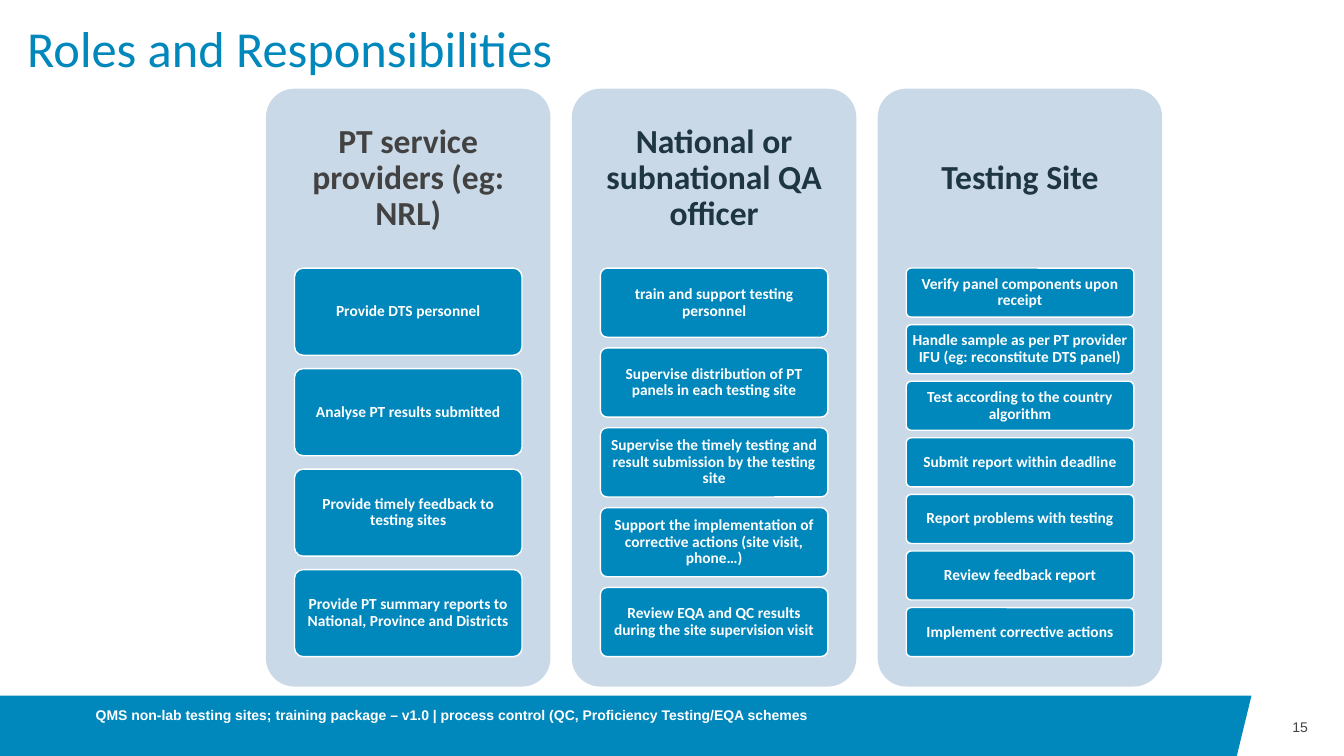
from pptx import Presentation
from pptx.dml.color import RGBColor
from pptx.enum.shapes import MSO_SHAPE as Shape
from pptx.enum.text import MSO_ANCHOR as Anchor, MSO_AUTO_SIZE as AutoSize, PP_ALIGN as Align
from pptx.util import Pt

TITLE = "Roles and Responsibilities"
FOOTER = ("QMS non-lab testing sites; training package – v1.0 | "
          "process control (QC, Proficiency Testing/EQA schemes")
PAGE = "15"
ROLES = [
    ("PT service providers (eg: NRL)", "grey", [
        "Provide DTS personnel",
        "Analyse PT results submitted",
        "Provide timely feedback to testing sites",
        "Provide PT summary reports to National, Province and Districts",
    ]),
    ("National or subnational QA officer", "navy", [
        "train and support testing personnel",
        "Supervise distribution of PT panels in each testing site",
        "Supervise the timely testing and result submission by the testing site",
        "Support the implementation of corrective actions (site visit, phone…)",
        "Review EQA and QC results during the site supervision visit",
    ]),
    ("Testing Site", "navy", [
        "Verify panel components upon receipt",
        "Handle sample as per PT provider IFU (eg: reconstitute DTS panel)",
        "Test according to the country algorithm",
        "Submit report within deadline",
        "Report problems with testing",
        "Review feedback report",
        "Implement corrective actions",
    ]),
]
COLORS = {"blue": "0087BC", "pale": "CAD9E7", "grey": "424242",
          "navy": "1D3641", "white": "FFFFFF"}

PANEL_LEFT, PANEL_TOP, PANEL_W, PANEL_H = 190, 63.4, 203.2, 427
PANEL_PITCH = 218.5
HEADER_H = PANEL_H * 0.3
STACK_H = PANEL_H * 0.65
CARD_INSET = PANEL_W * 0.1
CARD_W = PANEL_W * 0.8
GAP_RATIO = 2 / 13
BAND_TOP, BAND_BOTTOM = 496.8, 542


def rgb(name):
    return RGBColor.from_string(COLORS[name])


def write(sp, text, size, color, font="Calibri", bold=False, align=Align.LEFT,
          anchor=Anchor.MIDDLE, inset=(0, 0), spacing=None):
    tf = sp.text_frame
    tf.word_wrap = True
    tf.auto_size = AutoSize.NONE
    tf.vertical_anchor = anchor
    tf.margin_left = tf.margin_right = Pt(inset[0])
    tf.margin_top = tf.margin_bottom = Pt(inset[1])
    p = tf.paragraphs[0]
    p.alignment = align
    p.line_spacing = spacing
    r = p.add_run()
    r.text = text
    r.font.name, r.font.size, r.font.bold = font, Pt(size), bold
    r.font.color.rgb = rgb(color)


def paint(sp, fill, line=None):
    sp.shadow.inherit = False
    sp.fill.solid()
    sp.fill.fore_color.rgb = rgb(fill)
    if line:
        sp.line.color.rgb = rgb(line)
        sp.line.width = Pt(1)
    else:
        sp.line.fill.background()


def add_rounded(s, box, fill, line=None):
    sp = s.shapes.add_shape(Shape.ROUNDED_RECTANGLE, *map(Pt, box))
    sp.adjustments[0] = 0.1
    paint(sp, fill, line)
    return sp


def add_label(s, box, text, size, color, **style):
    write(s.shapes.add_textbox(*map(Pt, box)), text, size, color, **style)


def add_role(s, left, heading, color, duties):
    add_rounded(s, (left, PANEL_TOP, PANEL_W, PANEL_H), "pale")
    add_label(s, (left, PANEL_TOP, PANEL_W, HEADER_H), heading, 24, color,
              bold=True, align=Align.CENTER, inset=(7.2, 7.2), spacing=0.9)
    n = len(duties)
    card_h = STACK_H / (n + GAP_RATIO * (n - 1))
    for i, duty in enumerate(duties):
        top = PANEL_TOP + HEADER_H + i * card_h * (1 + GAP_RATIO)
        card = add_rounded(s, (left + CARD_INSET, top, CARD_W, card_h), "blue", "white")
        write(card, duty, 11, "white", bold=True, align=Align.CENTER,
              inset=(2.1, 1.6), spacing=0.9)


def main():
    prs = Presentation()
    prs.slide_width, prs.slide_height = Pt(960), Pt(540)
    s = prs.slides.add_slide(prs.slide_layouts[5])

    fb = s.shapes.build_freeform(Pt(0), Pt(BAND_TOP))
    fb.add_line_segments([(Pt(894), Pt(BAND_TOP)), (Pt(883), Pt(BAND_BOTTOM)),
                          (Pt(0), Pt(BAND_BOTTOM))], close=True)
    paint(fb.convert_to_shape(), "blue")

    title = s.shapes.title
    title.left, title.top, title.width, title.height = map(Pt, (19.4, 16.6, 828, 39.6))
    write(title, TITLE, 36, "blue", anchor=Anchor.BOTTOM, spacing=0.9)

    add_label(s, (894, BAND_TOP, 40.3, 45.4), PAGE, 10, "grey",
              font="Arial", align=Align.RIGHT)
    add_label(s, (68.4, BAND_TOP, 576, 27.6), FOOTER, 10, "white",
              font="Arial", bold=True)

    for i, role in enumerate(ROLES):
        add_role(s, PANEL_LEFT + i * PANEL_PITCH, *role)

    prs.save("out.pptx")


if __name__ == "__main__":
    main()
